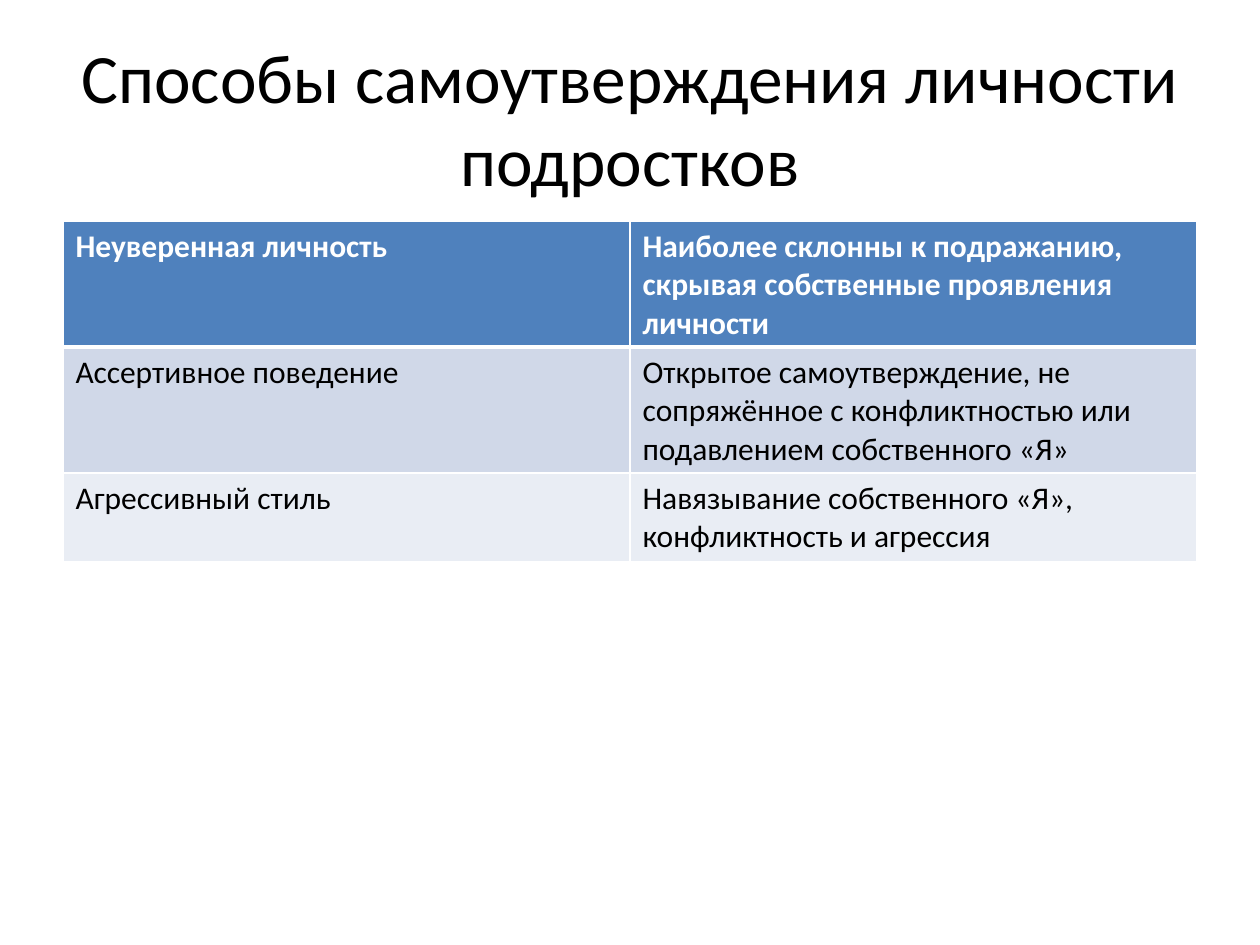
from lxml.etree import SubElement
from pptx import Presentation
from pptx.dml.color import RGBColor
from pptx.enum.text import MSO_ANCHOR, PP_ALIGN
from pptx.oxml.ns import qn
from pptx.util import Pt

EMU_PER_PX = 914400 / 126
TITLE = "Способы самоутверждения личности подростков"
BEHAVIOURS = [
    ("Неуверенная личность",
     "Наиболее склонны к подражанию, скрывая собственные проявления личности"),
    ("Ассертивное поведение",
     "Открытое самоутверждение, не сопряжённое с конфликтностью или подавлением собственного «Я»"),
    ("Агрессивный стиль",
     "Навязывание собственного «Я», конфликтность и агрессия"),
]
ROW_HEIGHTS = [126, 126, 88]
ROW_FILLS = ["4F81BD", "D0D8E8", "E9EDF4"]


def px(length):
    return round(length * EMU_PER_PX)


def color(value):
    return RGBColor.from_string(value)


class SlideBuilder:
    """Holds the style and the current slide, and adds elements to it."""

    font = "Calibri"
    ink = "000000"
    paper = "FFFFFF"

    def __init__(self, page):
        self.page = page

    def style(self, frame, size, ink, bold=False):
        for para in frame.paragraphs:
            for span in para.runs:
                span.font.name = self.font
                span.font.size = Pt(size)
                span.font.bold = bold
                span.font.color.rgb = color(ink)

    def title(self, text, left, top, width, height):
        box = self.page.shapes.add_textbox(px(left), px(top), px(width), px(height))
        frame = box.text_frame
        frame.word_wrap = True
        frame.vertical_anchor = MSO_ANCHOR.MIDDLE
        frame.text = text
        frame.paragraphs[0].alignment = PP_ALIGN.CENTER
        self.style(frame, 39.6, self.ink)

    def border(self, cell, side, points):
        properties = cell._tc.get_or_add_tcPr()
        line = SubElement(properties, qn(f"a:ln{side}"), w=str(Pt(points)))
        fill = SubElement(line, qn("a:solidFill"))
        SubElement(fill, qn("a:srgbClr"), val=self.paper)

    def table(self, rows, heights, fills, left, top, width):
        columns = len(rows[0])
        frame = self.page.shapes.add_table(
            len(rows), columns, px(left), px(top), px(width), px(sum(heights)))
        table = frame.table
        for column in table.columns:
            column.width = px(width / columns)
        for index, texts in enumerate(rows):
            table.rows[index].height = px(heights[index])
            header = index == 0
            widths = {"L": 1, "R": 1, "T": 3 if index == 1 else 1, "B": 3 if header else 1}
            for cell, text in zip(table.rows[index].cells, texts):
                for side, points in widths.items():
                    self.border(cell, side, points)
                cell.fill.solid()
                cell.fill.fore_color.rgb = color(fills[index])
                cell.text_frame.text = text
                self.style(cell.text_frame, 18, self.paper if header else self.ink, header)


def main():
    deck = Presentation()
    deck.slide_width, deck.slide_height = px(1260), px(945)
    builder = SlideBuilder(deck.slides.add_slide(deck.slide_layouts[6]))
    builder.title(TITLE, 63, 38, 1134, 158)
    builder.table(BEHAVIOURS, ROW_HEIGHTS, ROW_FILLS, 63, 221, 1134)
    deck.save("out.pptx")


if __name__ == "__main__":
    main()
